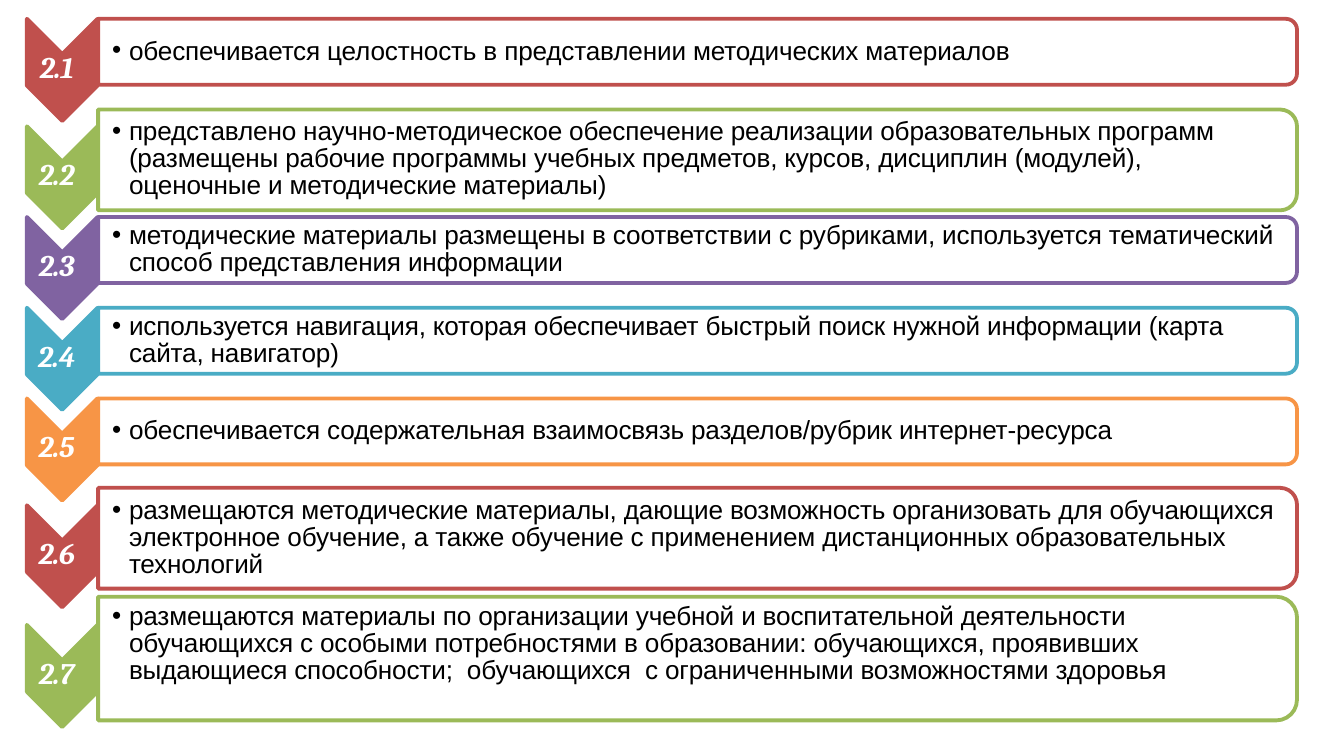
"""Build a slide of seven numbered chevrons with a bulleted panel beside each."""
from pptx import Presentation
from pptx import util as u
from pptx.dml.color import RGBColor
from pptx.enum import shapes, text
from pptx.oxml import parse_xml
from pptx.oxml.ns import nsdecls

PX = 4572
RED = RGBColor(0xC0, 0x50, 0x4D)
GREEN = RGBColor(0x9B, 0xBA, 0x58)
PURPLE = RGBColor(0x80, 0x63, 0xA1)
TEAL = RGBColor(0x4A, 0xAC, 0xC5)
ORANGE = RGBColor(0xF7, 0x95, 0x46)
WHITE = RGBColor(0xFF, 0xFF, 0xFF)
BLACK = RGBColor(0, 0, 0)

ROWS = [
    (RED, 28, 28, 98, 47, 1720,
     ["обеспечивается целостность в представлении методических материалов"]),
    (GREEN, 188, 163, 150, 167, 1666,
     ["представлено научно-методическое обеспечение реализации образовательных программ "
      "(размещены рабочие программы учебных предметов, курсов, дисциплин (модулей), "
      "оценочные и методические материалы)"]),
    (PURPLE, 323, 323, 98, 322, 1756,
     ["методические материалы размещены в соответствии с рубриками, используется "
      "тематический способ представления информации"]),
    (TEAL, 458, 458, 98, 457, 1680,
     ["используется навигация, которая обеспечивает быстрый поиск нужной информации "
      "(карта сайта, навигатор)"]),
    (ORANGE, 593, 593, 98, 612, 1720,
     ["обеспечивается содержательная взаимосвязь разделов/рубрик интернет-ресурса"]),
    (RED, 752, 726, 150, 731, 1754,
     ["размещаются методические материалы, дающие возможность организовать для "
      "обучающихся электронное обучение, а также обучение с применением дистанционных "
      "образовательных технологий"]),
    (GREEN, 930, 888, 184, 889, 1746,
     ["размещаются материалы по организации учебной и воспитательной деятельности "
      "обучающихся с особыми потребностями в образовании: обучающихся, проявивших",
      "выдающиеся способности;  обучающихся  с ограниченными возможностями здоровья"]),
]

deck = Presentation()
deck.slide_width, deck.slide_height = 2000 * PX, 1125 * PX
slide = deck.slides.add_slide(deck.slide_layouts[6])


def turned(kind, x, y, w, h, fill, line):
    """Add a preset turned a quarter so that it covers the given area."""
    gap = (w - h) * PX // 2
    shape = slide.shapes.add_shape(kind, x * PX + gap, y * PX - gap, h * PX, w * PX)
    shape.rotation = 90
    shape.shadow.inherit = False
    shape.fill.solid()
    shape.fill.fore_color.rgb = fill
    shape.line.color.rgb = line
    shape.line.width = u.Pt(2.04)


def write(lines, x, y, w, h, font, size, color, inset, lead=None,
          bold=False, bullet=False, align=text.PP_ALIGN.LEFT):
    """Add a text box with one paragraph per line, the first one bulleted if asked."""
    frame = slide.shapes.add_textbox(x * PX, y * PX, w * PX, h * PX).text_frame
    frame.word_wrap = True
    frame.margin_left = frame.margin_right = frame.margin_bottom = 0
    frame.margin_top = inset * PX
    for i, line in enumerate(lines):
        para = frame.paragraphs[0] if i == 0 else frame.add_paragraph()
        para.alignment = align
        if lead:
            para.line_spacing = u.Pt(lead)
        if bullet:
            props = para._p.get_or_add_pPr()
            props.set("marL", str(28 * PX))
            props.set("indent", str(0 if i else -25 * PX))
            if i == 0:
                props.append(parse_xml(f'<a:buFont {nsdecls("a")} typeface="Arial"/>'))
                props.append(parse_xml(f'<a:buChar {nsdecls("a")} char="•"/>'))
        para.font.size = u.Pt(size)
        run = para.add_run()
        run.text = line
        run.font.name = font
        run.font.size = u.Pt(size)
        run.font.bold = run.font.italic = bold
        run.font.color.rgb = color
        run._r.get_or_add_rPr().set("spc", "-10")


for num, (color, tip, top, high, start, wide, lines) in enumerate(ROWS, 1):
    turned(shapes.MSO_SHAPE.CHEVRON, 40, tip, 105, 152, color, color)
    write([f"2.{num}"], 46, tip + 41, 77, 58, "Cambria", 16, WHITE, 3,
          bold=True, align=text.PP_ALIGN.CENTER)
    turned(shapes.MSO_SHAPE.ROUND_2_SAME_RECTANGLE, 146, top, 1784, high, WHITE, color)
    write(lines, 164, start, wide, high - 16, "Arial", 14, BLACK, 10,
          lead=14.5, bullet=True)

deck.save("out.pptx")
